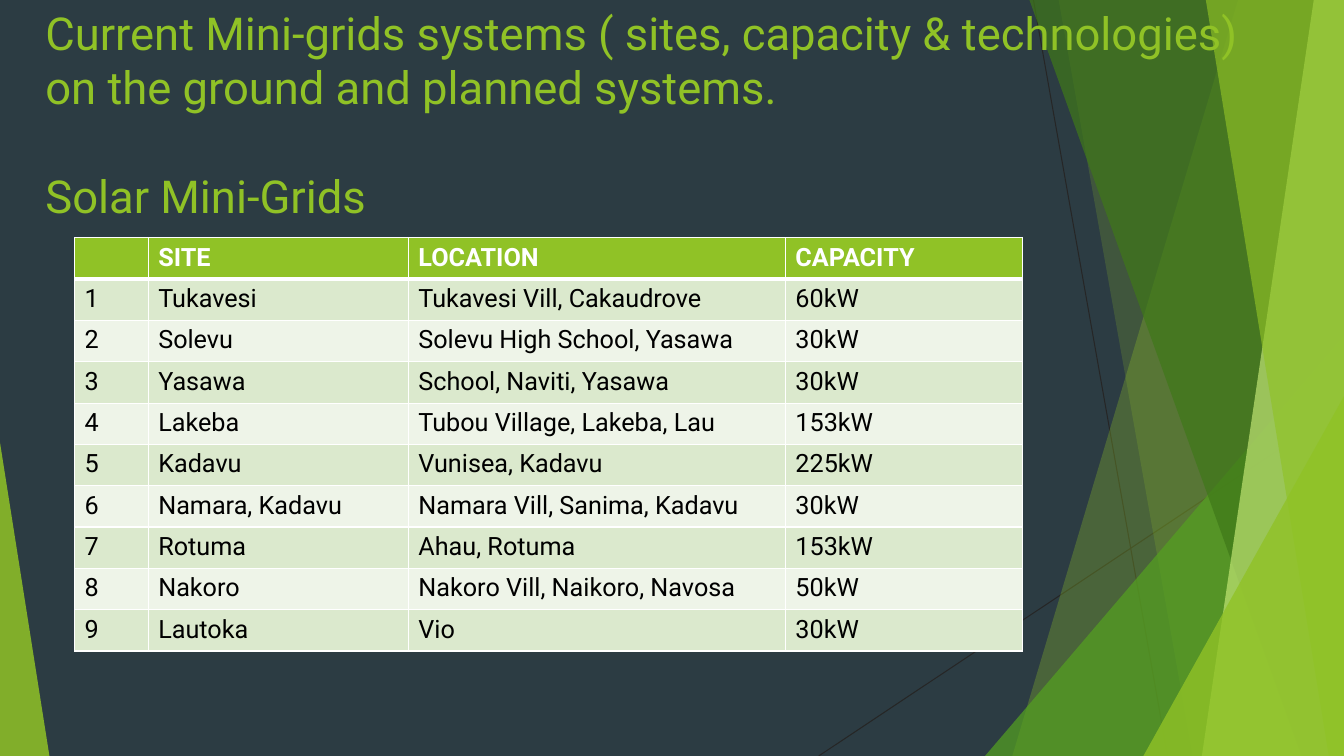
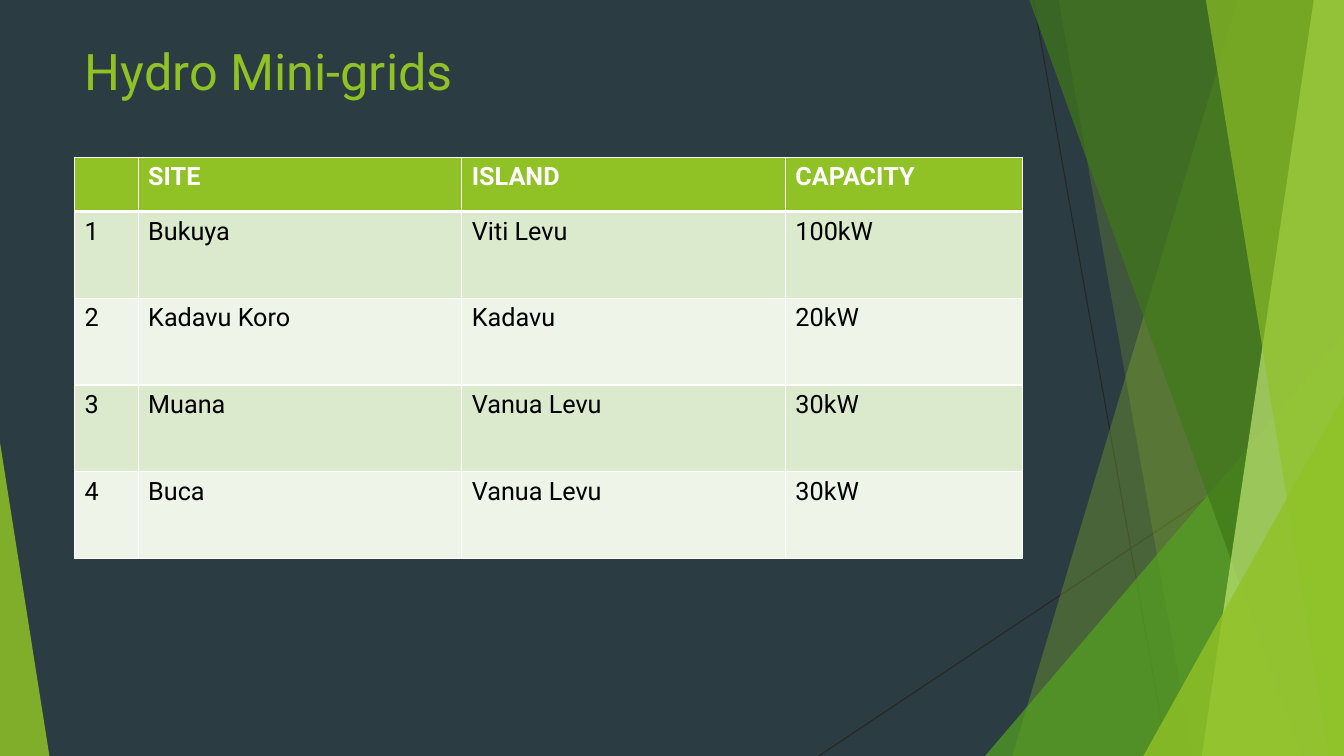
"""Build two slides listing solar and hydro mini-grids."""
from lxml import etree
from pptx import Presentation
from pptx import util as u
from pptx.dml import color
from pptx.enum import shapes, text
from pptx.oxml import ns

GREEN, WHITE, BLACK = "90C226", "FFFFFF", "000000"
BACKGROUND, THREAD = "2C3C43", "262626"
BANDS = ["DBE9CD", "EEF4E8"]
FONT = "Roboto"
WIDTH, HEIGHT = 13.33, 7.5
TABLE_LEFT = 0.74


def paint(fill, hex_color, alpha=100):
    """Set a solid fill, with its opacity in percent."""
    fill.solid()
    fill.fore_color.rgb = color.RGBColor.from_string(hex_color)
    if alpha < 100:
        for node in fill._xPr.iter(ns.qn("a:srgbClr")):
            etree.SubElement(node, ns.qn("a:alpha"), val=str(alpha * 1000))


def style(paragraph, size, hex_color, bold=False):
    """Format every run of a paragraph."""
    for run in paragraph.runs:
        run.font.name = FONT
        run.font.size = u.Pt(size)
        run.font.bold = bold
        paint(run.font.fill, hex_color)


presentation = Presentation()
presentation.slide_width = u.Inches(WIDTH)
presentation.slide_height = u.Inches(HEIGHT)
master = presentation.slide_master
paint(master.background.fill, BACKGROUND)
title_only = presentation.slide_layouts[5]

threads = [(10.25, 0, 11.58, HEIGHT), (WIDTH, 4.03, 8.12, HEIGHT)]
# Ribbons hold top and bottom x; triangles hold left, top, width and apex.
facets = [
    ("ribbon", (12.28, 10.04), GREEN, 30),
    ("ribbon", (10.5, 11.83), GREEN, 20),
    ("triangle", (9.77, 3.33, 3.56, 1), "54A021", 72),
    ("ribbon", (10.21, 12.91), "3F7819", 70),
    ("ribbon", (13.03, 11.92), "C0E474", 70),
    ("ribbon", (11.96, 13.18), GREEN, 65),
    ("triangle", (11.34, 3.93, 1.99, 1), GREEN, 80),
    ("triangle", (0, 4.39, 0.49, 0), GREEN, 85),
]

pages = [
    {
        "title": "Current Mini-grids systems ( sites, capacity & technologies) "
                 "on the ground and planned systems.\nSolar Mini-Grids",
        "box": (0.35, 0, 12.34, 1.42),
        "size": 32.4,
        "top": 2.36,
        "columns": [0.73, 2.58, 3.74, 2.35],
        "heights": (0.41, 0.41),
        "rows": [
            ("SITE", "LOCATION", "CAPACITY"),
            ("Tukavesi", "Tukavesi Vill, Cakaudrove", "60kW"),
            ("Solevu", "Solevu High School, Yasawa", "30kW"),
            ("Yasawa", "School, Naviti, Yasawa", "30kW"),
            ("Lakeba", "Tubou Village, Lakeba, Lau", "153kW"),
            ("Kadavu", "Vunisea, Kadavu", "225kW"),
            ("Namara, Kadavu", "Namara Vill, Sanima, Kadavu", "30kW"),
            ("Rotuma", "Ahau, Rotuma", "153kW"),
            ("Nakoro", "Nakoro Vill, Naikoro, Navosa", "50kW"),
            ("Lautoka", "Vio", "30kW"),
        ],
    },
    {
        "title": "Hydro Mini-grids",
        "box": (TABLE_LEFT, 0.35, 9.4, 0.83),
        "size": 36,
        "top": 1.56,
        "columns": [0.63, 3.21, 3.21, 2.35],
        "heights": (0.54, 0.86),
        "rows": [
            ("SITE", "ISLAND", "CAPACITY"),
            ("Bukuya", "Viti Levu", "100kW"),
            ("Kadavu Koro", "Kadavu", "20kW"),
            ("Muana", "Vanua Levu", "30kW"),
            ("Buca", "Vanua Levu", "30kW"),
        ],
    },
]

slides = [presentation.slides.add_slide(title_only) for page in pages]

canvas = slides[0].shapes
decorations = []
for ends in threads:
    connector = canvas.add_connector(
        shapes.MSO_CONNECTOR.STRAIGHT, *[u.Inches(value) for value in ends])
    connector.line.width = u.Pt(0.75)
    paint(connector.line.fill, THREAD)
    etree.SubElement(connector.element.spPr, ns.qn("a:effectLst"))
    decorations.append(connector)
for kind, numbers, hex_color, alpha in facets:
    if kind == "ribbon":
        top_x, bottom_x = numbers
        builder = canvas.build_freeform(u.Inches(top_x), 0)
        corners = [(WIDTH, 0), (WIDTH, HEIGHT), (bottom_x, HEIGHT)]
        builder.add_line_segments([(u.Inches(x), u.Inches(y)) for x, y in corners])
        shape = builder.convert_to_shape()
    else:
        left, top, width, apex = numbers
        shape = canvas.add_shape(
            shapes.MSO_SHAPE.ISOSCELES_TRIANGLE, u.Inches(left), u.Inches(top),
            u.Inches(width), u.Inches(HEIGHT - top))
        shape.adjustments[0] = apex
    shape.shadow.inherit = False
    shape.line.fill.background()
    paint(shape.fill, hex_color, alpha)
    decorations.append(shape)

for index, decoration in enumerate(decorations):
    decoration.element.xpath(".//p:cNvPr")[0].set("id", str(100 + index))
    master.shapes.element.insert(2 + index, decoration.element)

for slide, page in zip(slides, pages):
    title = slide.shapes.title
    title.left, title.top, title.width, title.height = map(u.Inches, page["box"])
    frame = title.text_frame
    frame.text = page["title"]
    frame.word_wrap = True
    frame.auto_size = text.MSO_AUTO_SIZE.NONE
    frame.vertical_anchor = text.MSO_ANCHOR.TOP
    line_height = u.Pt(1.2 * page["size"])
    for index, paragraph in enumerate(frame.paragraphs):
        paragraph.alignment = text.PP_ALIGN.LEFT
        paragraph.line_spacing = line_height
        paragraph.space_before = line_height if index else 0
        style(paragraph, page["size"], GREEN)

    rows, columns = page["rows"], page["columns"]
    header_height, body_height = page["heights"]
    table = slide.shapes.add_table(
        len(rows), len(columns), u.Inches(TABLE_LEFT), u.Inches(page["top"]),
        u.Inches(sum(columns)),
        u.Inches(header_height + body_height * (len(rows) - 1))).table
    for column, width in zip(table.columns, columns):
        column.width = u.Inches(width)
    for row_index, values in enumerate(rows):
        header = row_index == 0
        table.rows[row_index].height = u.Inches(header_height if header else body_height)
        number = "" if header else str(row_index)
        for column_index, value in enumerate((number, *values)):
            cell = table.cell(row_index, column_index)
            cell.text = value
            style(cell.text_frame.paragraphs[0], 18, WHITE if header else BLACK, header)
            properties = cell._tc.get_or_add_tcPr()
            for side in "LRTB":
                thick = (row_index, side) in [(0, "B"), (1, "T")]
                border = etree.SubElement(
                    properties, ns.qn(f"a:ln{side}"), w=str(u.Pt(3 if thick else 1)))
                solid = etree.SubElement(border, ns.qn("a:solidFill"))
                etree.SubElement(solid, ns.qn("a:srgbClr"), val=WHITE)
            paint(cell.fill, GREEN if header else BANDS[(row_index - 1) % 2])

presentation.save("out.pptx")
